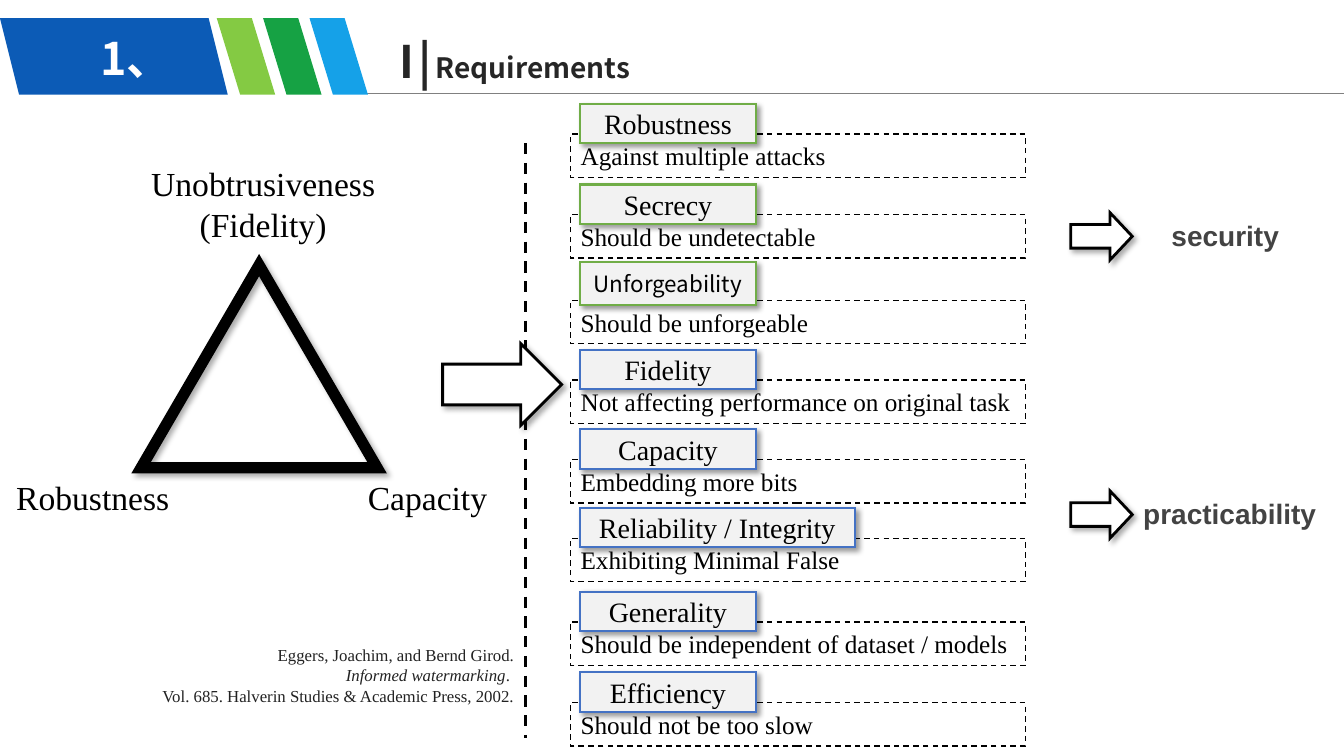
"""Build the slide on watermarking requirements."""
from dataclasses import dataclass

from lxml import etree
from pptx import Presentation
from pptx.dml.color import RGBColor
from pptx.enum.dml import MSO_LINE
from pptx.enum.shapes import MSO_CONNECTOR, MSO_SHAPE
from pptx.enum.text import MSO_ANCHOR, MSO_AUTO_SIZE, PP_ALIGN
from pptx.oxml.ns import qn
from pptx.util import Inches, Pt

LEFT, CENTER, RIGHT, JUSTIFY = PP_ALIGN.LEFT, PP_ALIGN.CENTER, PP_ALIGN.RIGHT, PP_ALIGN.JUSTIFY
TOP, MIDDLE = MSO_ANCHOR.TOP, MSO_ANCHOR.MIDDLE
NO_AUTOFIT = MSO_AUTO_SIZE.NONE
DASH = MSO_LINE.DASH
STRAIGHT = MSO_CONNECTOR.STRAIGHT
RECTANGLE, TRIANGLE = MSO_SHAPE.RECTANGLE, MSO_SHAPE.ISOSCELES_TRIANGLE
ARROW, PARALLELOGRAM = MSO_SHAPE.RIGHT_ARROW, MSO_SHAPE.PARALLELOGRAM
SERIF, SANS, CJK = "Times New Roman", "Arial", "Noto Sans CJK SC"
COLOURS = {
    "black": "000000", "white": "FFFFFF", "rule": "808080", "badge": "0C5BB6",
    "sky": "15A1E8", "green": "16A244", "lime": "84CA43", "label": "F2F2F2",
    "security": "70AD47", "practicability": "4472C4", "title": "262626",
    "goal": "434343", "citation": "222222",
}


@dataclass
class Requirement:
    """A named requirement, its explanation and the goal it serves."""
    top: float
    name: str
    detail: str
    goal: str
    name_width: float = 1.75
    name_height: float = 0.39
    rise: float = 0.3
    size: int = 20
    font: str = SERIF


@dataclass
class Corner:
    """A property at a corner of the trade-off triangle."""
    name: str
    left: float
    top: float
    width: float
    height: float = 0.5


@dataclass
class Goal:
    """A goal and the arrow leading to it."""
    name: str
    left: float
    top: float
    width: float


REQUIREMENTS = [
    Requirement(1.33, "Robustness", "Against multiple attacks", "security"),
    Requirement(2.13, "Secrecy", "Should be undetectable", "security"),
    Requirement(2.98, "Unforgeability", "Should be unforgeable", "security",
                name_height=0.43, rise=0.38, size=16, font=CJK),
    Requirement(3.77, "Fidelity", "Not affecting performance on original task", "practicability"),
    Requirement(4.56, "Capacity", "Embedding more bits", "practicability"),
    Requirement(5.34, "Reliability / Integrity", "Exhibiting Minimal False", "practicability",
                name_width=2.73),
    Requirement(6.17, "Generality", "Should be independent of dataset / models", "practicability"),
    Requirement(6.97, "Efficiency", "Should not be too slow", "practicability"),
]
CORNERS = [
    Corner("Unobtrusiveness(Fidelity)", 1.36, 1.57, 2.5, 0.91),
    Corner("Robustness", 0, 4.68, 1.84),
    Corner("Capacity", 2.99, 4.68, 2.5),
]
GOALS = [Goal("security", 11.52, 2.11, 1.38), Goal("practicability", 11.24, 4.87, 1.93)]
CITATION = [
    [("Eggers, Joachim, and Bernd Girod.", False)],
    [("Informed watermarking", True), (". ", False)],
    [("Vol. 685. Halverin Studies & Academic Press, 2002.", False)],
]


def rgb(name: str) -> RGBColor:
    """Look up a named colour."""
    return RGBColor.from_string(COLOURS[name])


def write(paragraph, text: str, *, size: float, font: str = SERIF, colour: str = "black",
          bold: bool = False, italic: bool = False, align=LEFT, spacing: float = 0) -> None:
    """Append a formatted run to a paragraph."""
    paragraph.alignment = align
    run = paragraph.add_run()
    run.text = text
    run.font.size, run.font.name = Pt(size), font
    run.font.bold, run.font.italic = bold, italic
    run.font.color.rgb = rgb(colour)
    properties = run.font._element
    properties.set("spc", str(round(spacing * 100)))
    etree.SubElement(properties, qn("a:ea")).set("typeface", font)


def prepare(shape, anchor=TOP, wrap: bool = True):
    """Set up a text frame and return its first paragraph."""
    frame = shape.text_frame
    frame.auto_size, frame.word_wrap, frame.vertical_anchor = NO_AUTOFIT, wrap, anchor
    return frame.paragraphs[0]


def add_text_box(slide, left: float, top: float, width: float, height: float):
    """Add an empty text box."""
    return slide.shapes.add_textbox(Inches(left), Inches(top), Inches(width), Inches(height))


def add_block(slide, kind, left: float, top: float, width: float, height: float, *,
              fill: str = "", line: str = "", weight: float = 1, dash=None, shadow: int = 0):
    """Add a preset shape, with a shadow of the given opacity if any."""
    block = slide.shapes.add_shape(kind, Inches(left), Inches(top), Inches(width), Inches(height))
    block.shadow.inherit = False
    if fill:
        block.fill.solid()
        block.fill.fore_color.rgb = rgb(fill)
    else:
        block.fill.background()
    if line:
        block.line.color.rgb, block.line.width = rgb(line), Pt(weight)
        block.line.dash_style = dash
        etree.SubElement(block._element.spPr.find(qn("a:ln")), qn("a:miter"), lim="800000")
    else:
        block.line.fill.background()
    if shadow:
        effects = block._element.spPr.find(qn("a:effectLst"))
        outer = etree.SubElement(effects, qn("a:outerShdw"), blurRad=str(Pt(4)), dist=str(Pt(3)),
                                 dir="2700000", algn="tl", rotWithShape="0")
        tint = etree.SubElement(outer, qn("a:srgbClr"), val=COLOURS["black"])
        etree.SubElement(tint, qn("a:alpha"), val=str(shadow * 1000))
    return block


def add_line(slide, start: tuple[float, float], end: tuple[float, float], colour: str,
             weight: float, dash=None) -> None:
    """Add a straight line."""
    line = slide.shapes.add_connector(STRAIGHT, *(Inches(value) for value in start + end))
    line.line.color.rgb, line.line.width = rgb(colour), Pt(weight)
    line.line.dash_style = dash
    etree.SubElement(line._element.spPr, qn("a:effectLst"))


def add_header(slide) -> None:
    """Draw the section number, coloured stripes and title."""
    add_line(slide, (3.5, 0.93), (13.33, 0.93), "rule", 1)
    stripes = [(0, 2.26, "badge", 0.25)]
    stripes += [(2.15 + 0.46 * i, 0.58, colour, 0.4) for i, colour in enumerate(("lime", "green", "sky"))]
    for left, width, colour, slant in stripes:
        stripe = add_block(slide, PARALLELOGRAM, left, 0.18, width, 0.76, fill=colour)
        stripe.adjustments[0] = slant
        stripe._element.spPr.xfrm.set("flipH", "1")
    number = add_text_box(slide, 0.61, 0.3, 1.48, 0.54)
    frame = number.text_frame
    frame.margin_left = frame.margin_right = frame.margin_top = frame.margin_bottom = 0
    write(prepare(number, MIDDLE), "1、", size=32, font=CJK, colour="white", bold=True, align=CENTER)
    title = slide.shapes.title
    title.left, title.top, title.width, title.height = map(Inches, (3.86, 0.28, 2.63, 0.64))
    heading = prepare(title, wrap=False)
    write(heading, "I|", size=32, font=CJK, colour="title", bold=True, spacing=3)
    write(heading, "Requirements", size=20, font=CJK, colour="title", bold=True)


def add_trade_off(slide) -> None:
    """Draw the triangle, its corner names and the citation."""
    add_block(slide, TRIANGLE, 1.4, 2.63, 2.34, 2.01, line="black", weight=8, shadow=32)
    for corner in CORNERS:
        box = add_text_box(slide, corner.left, corner.top, corner.width, corner.height)
        write(prepare(box), corner.name, size=24, align=CENTER)
    add_line(slide, (5.21, 1.42), (5.21, 7.32), "black", 2, DASH)
    add_block(slide, ARROW, 4.39, 3.41, 1.18, 0.81, fill="white", line="black", weight=2, shadow=32)
    citation = add_text_box(slide, 1.38, 6.35, 3.82, 0.71)
    paragraph = prepare(citation)
    for i, parts in enumerate(CITATION):
        paragraph = citation.text_frame.add_paragraph() if i else paragraph
        for text, italic in parts:
            write(paragraph, text, size=12, colour="citation", italic=italic, align=RIGHT)


def add_requirement(slide, item: Requirement) -> None:
    """Draw a requirement's explanation and its overlapping name."""
    detail = add_block(slide, RECTANGLE, 5.66, item.top, 4.51, 0.43, fill="white", line="black", dash=DASH)
    write(prepare(detail, MIDDLE), item.detail, size=18, align=JUSTIFY)
    name = add_block(slide, RECTANGLE, 5.75, item.top - item.rise, item.name_width, item.name_height,
                     fill="label", line=item.goal, weight=1.5, shadow=40)
    write(prepare(name, MIDDLE), item.name, size=item.size, font=item.font, align=CENTER)


def add_goal(slide, goal: Goal) -> None:
    """Draw a goal and its arrow."""
    arrow = add_block(slide, ARROW, 10.62, goal.top, 0.61, 0.47, fill="white", line="black",
                      weight=2, shadow=32)
    arrow.adjustments[1] = 0.47
    box = add_text_box(slide, goal.left, goal.top + 0.01, goal.width, 0.44)
    write(prepare(box, wrap=False), goal.name, size=20, font=SANS, colour="goal", bold=True)


def main() -> None:
    """Build and save the presentation."""
    deck = Presentation()
    deck.slide_width, deck.slide_height = Inches(13.33), Inches(7.5)
    slide = deck.slides.add_slide(deck.slide_layouts[5])
    add_header(slide)
    add_trade_off(slide)
    for item in REQUIREMENTS:
        add_requirement(slide, item)
    for goal in GOALS:
        add_goal(slide, goal)
    deck.save("out.pptx")


if __name__ == "__main__":
    main()
